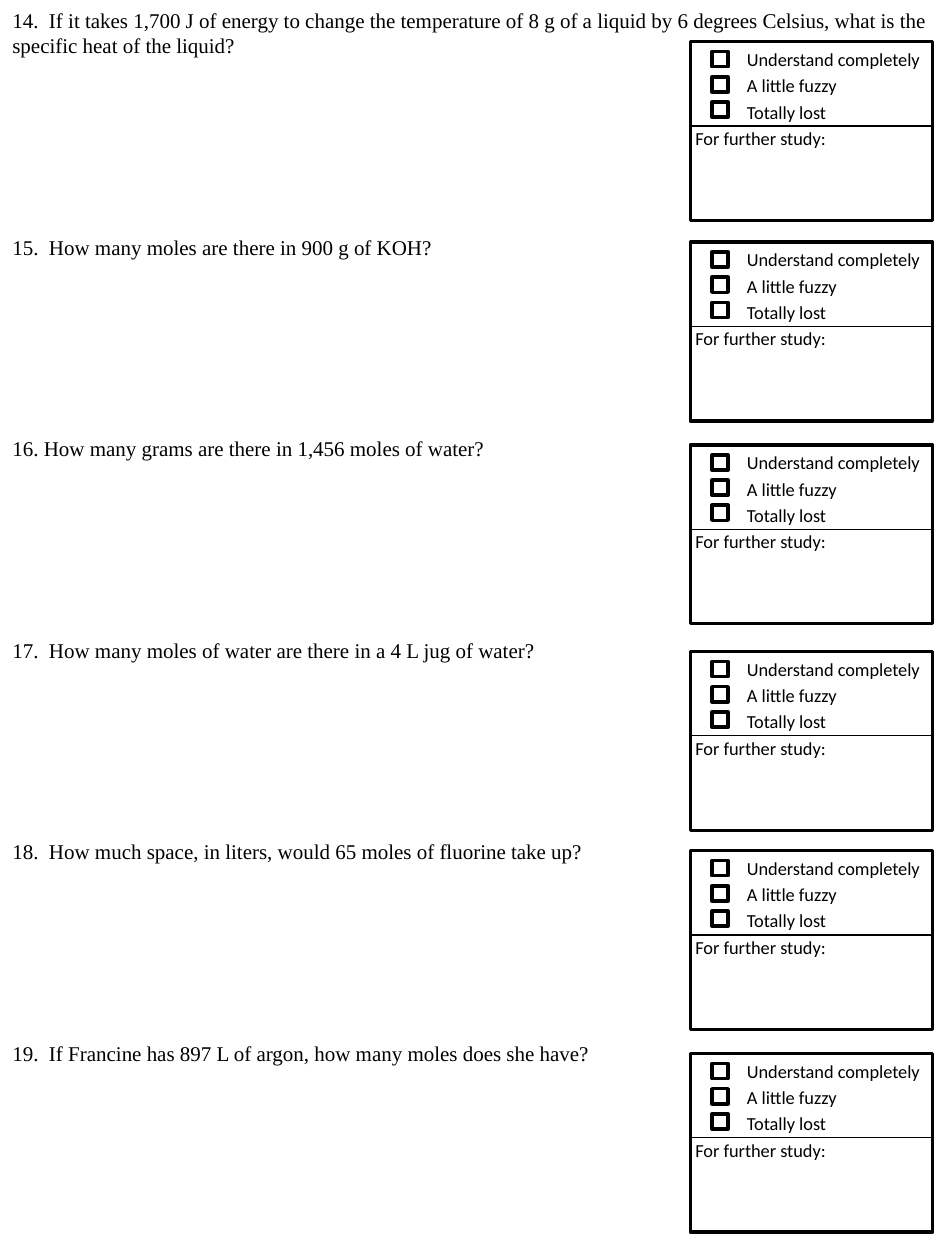
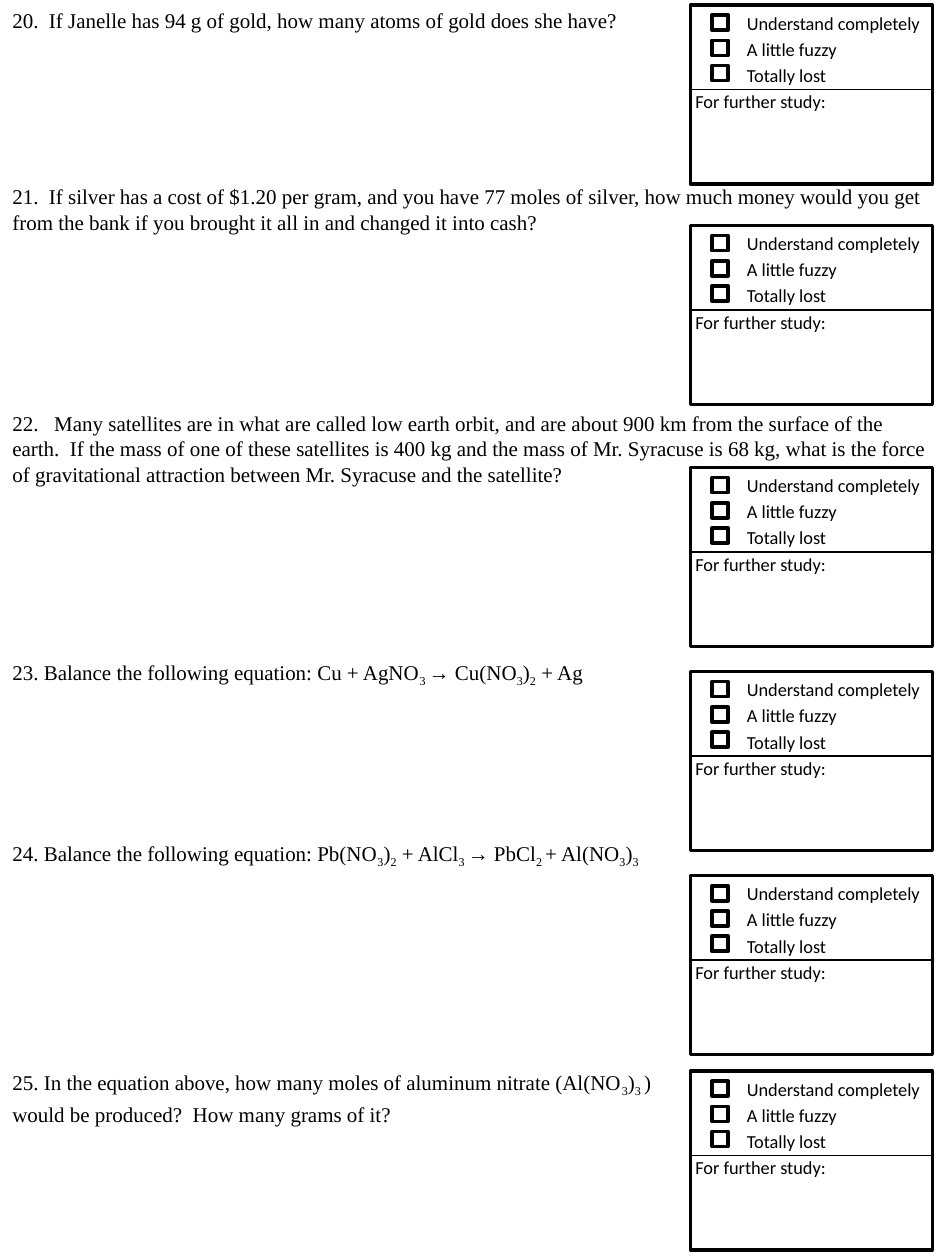
from lxml.etree import SubElement
from pptx import Presentation
from pptx.dml.color import RGBColor
from pptx.enum.shapes import MSO_CONNECTOR, MSO_SHAPE
from pptx.enum.text import PP_ALIGN
from pptx.oxml.ns import qn
from pptx.util import Emu, Pt

BLACK = RGBColor(0, 0, 0)
WHITE = RGBColor(255, 255, 255)
SCALE = 9144
GAP = 100.8
OPTIONS = ["Understand completely", "A little fuzzy", "Totally lost"]


def px(*values):
    return [Emu(v * SCALE) for v in values]


def write(p, text, font="Calibri", size=10.5, color=BLACK, spacing=None, before=0):
    p.alignment = PP_ALIGN.LEFT
    p.space_before = Pt(before)
    if spacing:
        p.line_spacing = Pt(spacing)
    for i, part in enumerate(text.split("_")):
        if not part:
            continue
        r = p.add_run()
        r.text = part
        r.font.name = font
        r.font.size = Pt(size)
        r.font.color.rgb = color
        if i % 2:
            r._r.get_or_add_rPr().set("baseline", "-25000")


def number(p, start):
    pPr = p._p.get_or_add_pPr()
    pPr.set("marL", "228600")
    pPr.set("indent", "-228600")
    if start:
        SubElement(pPr, qn("a:buFont"), typeface="Times New Roman")
        SubElement(pPr, qn("a:buAutoNum"), type="arabicPeriod", startAt=str(start))


class Worksheet:
    def __init__(self, prs):
        self.prs = prs
        self.s = None

    def new_slide(self):
        self.s = self.prs.slides.add_slide(self.prs.slide_layouts[6])
        fill = self.s.background.fill
        fill.solid()
        fill.fore_color.rgb = WHITE

    def text_box(self, shapes, box, lines, wrap=True, **style):
        tf = shapes.add_textbox(*px(*box)).text_frame
        tf.word_wrap = wrap
        for i, line in enumerate(lines):
            p = tf.paragraphs[0] if i == 0 else tf.add_paragraph()
            write(p, line, **style)

    def frame(self, shapes, *box):
        sp = shapes.add_shape(MSO_SHAPE.RECTANGLE, *px(*box))
        sp.shadow.inherit = False
        sp.fill.background()
        sp.line.color.rgb = BLACK
        sp.line.width = Pt(2)

    def rule(self, shapes, left, right, y):
        line = shapes.add_connector(MSO_CONNECTOR.STRAIGHT, *px(left, y, right, y))
        line.line.color.rgb = BLACK
        line.line.width = Pt(0.75)
        SubElement(line._element.spPr, qn("a:effectLst"))

    def questions(self, height, items):
        tf = self.s.shapes.add_textbox(*px(0, 1, 750, height)).text_frame
        tf.word_wrap = True
        for i, (text, before, start) in enumerate(items):
            p = tf.paragraphs[0] if i == 0 else tf.add_paragraph()
            write(p, text, font="Times New Roman", size=12, spacing=14.4, before=before)
            if start is not None:
                number(p, start)

    def self_check(self, top):
        shapes = self.s.shapes.add_group_shape().shapes
        self.frame(shapes, 548, top, 192, 142)
        self.text_box(shapes, (583, top - 3, 167, 72), OPTIONS, spacing=15)
        self.rule(shapes, 548, 740, top + 67)
        self.text_box(shapes, (542, top + 63, 126, 28), ["For further study:"], wrap=False)
        for i in range(len(OPTIONS)):
            self.frame(shapes, 565, top + 8 + 20 * i, 13, 12)


PAGES = [
    (1000, [33, 192, 353, 517, 675, 836], [
        ("14.  If it takes 1,700 J of energy to change the temperature of 8 g of a liquid "
         "by 6 degrees Celsius, what is the specific heat of the liquid?", 0, None),
        ("15.  How many moles are there in 900 g of KOH?", GAP, None),
        ("How many grams are there in 1,456 moles of water?", GAP, 16),
        ("17.  How many moles of water are there in a 4 L jug of water?", GAP, None),
        ("18.  How much space, in liters, would 65 moles of fluorine take up?", GAP, None),
        ("19.  If Francine has 897 L of argon, how many moles does she have?", GAP, None),
    ]),
    (939, [4, 179, 371, 533, 695, 850], [
        ("20.  If Janelle has 94 g of gold, how many atoms of gold does she have?", 0, None),
        ("21.  If silver has a cost of $1.20 per gram, and you have 77 moles of silver, "
         "how much money would you get from the bank if you brought it all in and "
         "changed it into cash?", 86.4, None),
        ("22.   Many satellites are in what are called low earth orbit, and are about "
         "900 km from the surface of the earth.  If the mass of one of these satellites "
         "is 400 kg and the mass of Mr. Syracuse is 68 kg, what is the force of "
         "gravitational attraction between Mr. Syracuse and the satellite?", GAP, None),
        ("Balance the following equation: Cu + AgNO_3 _→ Cu(NO_3_)_2_ + Ag", GAP, 23),
        ("Balance the following equation: Pb(NO_3_)_2_ + AlCl_3 _→ PbCl_2 _+ Al(NO_3_)_3",
         89, 24),
        ("In the equation above, how many moles of aluminum nitrate (Al(NO_3_)_3 _)",
         116.5, 25),
        ("would be produced?  How many grams of it?", 2.2, 0),
    ]),
]


def main():
    prs = Presentation()
    prs.slide_width, prs.slide_height = px(750, 1000)
    sheet = Worksheet(prs)
    for height, tops, items in PAGES:
        sheet.new_slide()
        sheet.questions(height, items)
        for top in tops:
            sheet.self_check(top)
    prs.save("out.pptx")


if __name__ == "__main__":
    main()
